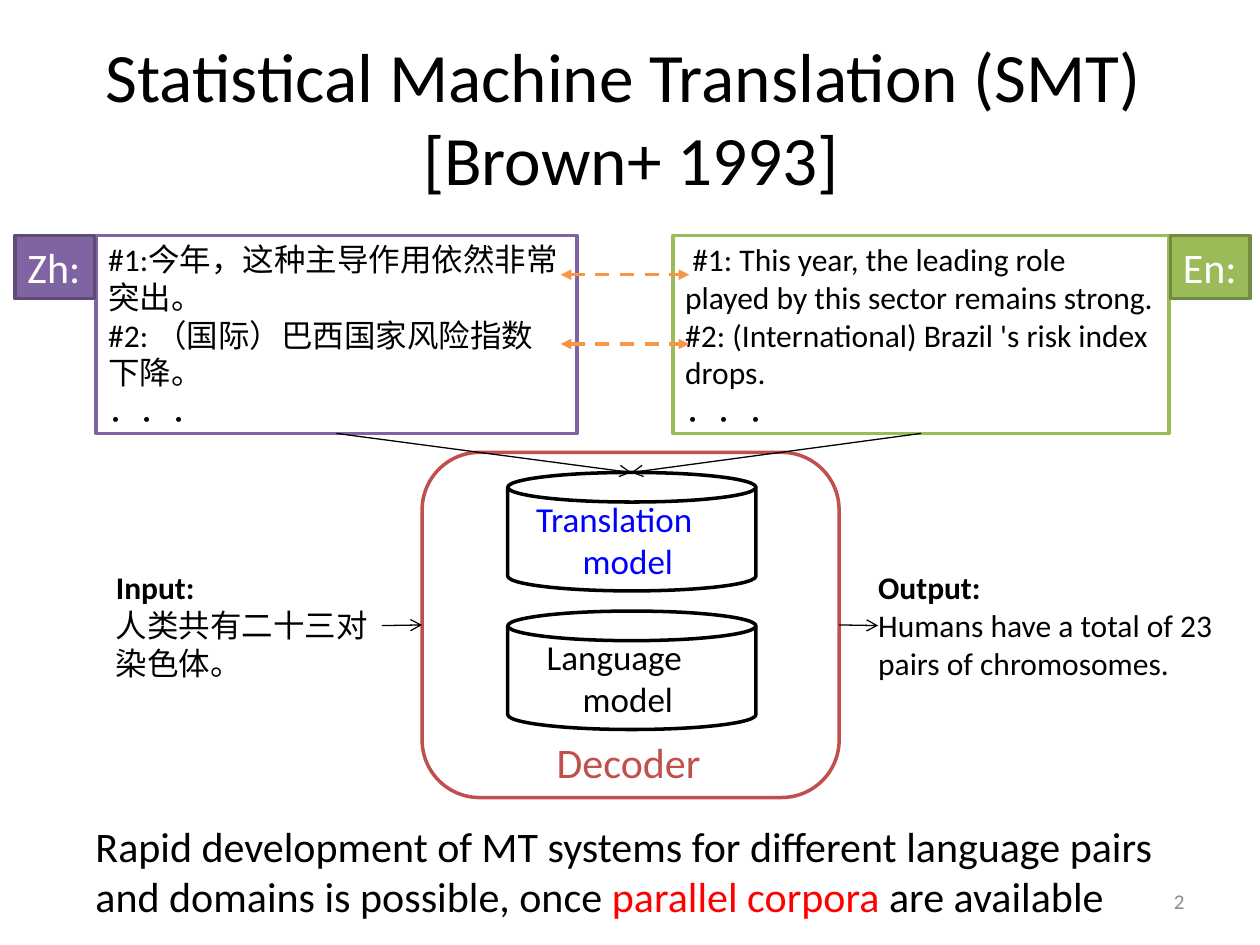
from lxml import etree
from pptx import Presentation
from pptx.dml.color import RGBColor
from pptx.enum import dml, shapes, text
from pptx.oxml.ns import qn
from pptx.util import Inches, Pt

BLACK, WHITE, BLUE, RED, GREY = "000000", "FFFFFF", "0000FF", "FF0000", "8C8C8C"
PURPLE, GREEN, ORANGE, BRICK = "8064A2", "9BBB59", "F79646", "C0504D"
TOP, LEFT, BOTTOM, RIGHT = range(4)
CENTER, END = text.PP_ALIGN.CENTER, text.PP_ALIGN.RIGHT
MIDDLE = text.MSO_ANCHOR.MIDDLE
SHAPE = shapes.MSO_SHAPE


def rgb(value):
    return RGBColor.from_string(value)


class Board:
    """Style and current slide; lengths are cells of a 100 x 75 grid."""
    latin, asian = "Calibri", "Noto Sans CJK SC"

    def __init__(self, columns=100, rows=75):
        self.deck = Presentation()
        self.deck.slide_width, self.deck.slide_height = Inches(10), Inches(7.5)
        self.cell_w = self.deck.slide_width / columns
        self.cell_h = self.deck.slide_height / rows
        self.slide = self.deck.slides.add_slide(self.deck.slide_layouts[5])

    def cells(self, *values):
        units = (self.cell_w, self.cell_h)
        return [round(value * units[i % 2]) for i, value in enumerate(values)]

    def set_text(self, frame, paragraphs, size, color=BLACK, align=text.PP_ALIGN.LEFT, **fmt):
        """Each paragraph is a string or a list of (string, font overrides)."""
        for name, value in {"word_wrap": True, "auto_size": text.MSO_AUTO_SIZE.NONE, **fmt}.items():
            setattr(frame, name, value)
        for i, runs in enumerate(paragraphs):
            paragraph = frame.paragraphs[0] if i == 0 else frame.add_paragraph()
            paragraph.alignment = align
            for words, changes in [(runs, {})] if isinstance(runs, str) else runs:
                for j, line in enumerate(words.split("\n")):
                    if j:
                        paragraph.add_line_break()
                    run = paragraph.add_run()
                    run.text = line
                    self.style(run.font, size, **{"color": color, **changes})

    def style(self, font, size, color, bold=False):
        for name, value in {"size": Pt(size), "name": self.latin, "bold": bold}.items():
            setattr(font, name, value)
        font.color.rgb = rgb(color)
        latin = font._element.find(qn("a:latin"))
        asian = etree.Element(qn("a:ea"), typeface=self.asian)
        latin.addnext(asian)

    def title(self, at, words, size):
        holder = self.slide.shapes.title
        holder.left, holder.top, holder.width, holder.height = self.cells(*at)
        self.set_text(holder.text_frame, [words], size, align=CENTER, vertical_anchor=MIDDLE)

    def label(self, at, paragraphs, size, **fmt):
        box = self.slide.shapes.add_textbox(*self.cells(*at))
        self.set_text(box.text_frame, paragraphs, size, **fmt)
        return box

    def shape(self, kind, at, line, fill=None, paragraphs=(), size=18, **fmt):
        item = self.slide.shapes.add_shape(kind, *self.cells(*at))
        item.shadow.inherit = False
        if fill:
            item.fill.solid()
            item.fill.fore_color.rgb = rgb(fill)
        else:
            item.fill.background()
        item.line.color.rgb, item.line.width = rgb(line), Pt(2)
        self.set_text(item.text_frame, paragraphs, size, **fmt)
        return item

    def arrow(self, start, end, color=BLACK, width=0.75, dash=None, **heads):
        """Ends are (x, y) cells, or (shape, side) to join the shape."""
        joined = [not isinstance(point[0], (int, float)) for point in (start, end)]
        places = [(0, 0) if join else point for join, point in zip(joined, (start, end))]
        link = self.slide.shapes.add_connector(
            shapes.MSO_CONNECTOR.STRAIGHT, *self.cells(*places[0], *places[1]))
        if joined[0]:
            link.begin_connect(*start)
        if joined[1]:
            link.end_connect(*end)
        link.line.color.rgb, link.line.width = rgb(color), Pt(width)
        if dash:
            link.line.dash_style = dash
        for name, kind in (heads or {"tailEnd": "arrow"}).items():
            etree.SubElement(link.line._get_or_add_ln(), qn(f"a:{name}"), type=kind)
        etree.SubElement(link._element.spPr, qn("a:effectLst"))


def main():
    board = Board()
    board.title((5.1, 3, 90, 12.5), "Statistical Machine Translation (SMT) \n[Brown+ 1993]", 39.6)

    # Parallel corpora with their language tags
    chinese = ["#1:今年，这种主导作用依然非常突出。", "#2: （国际）巴西国家风险指数下降。", "．．．"]
    english = [" #1: This year, the leading role played by this sector remains strong.",
               "#2: (International) Brazil 's risk index drops.", "．．．"]
    corpora = []
    for sentences, left, width, tag, tag_left, color, edge in (
            (chinese, 7.6, 38.2, "Zh:", 1.2, PURPLE, "5F4A78"),
            (english, 53.4, 39.4, "En:", 92.9, GREEN, "738A42")):
        corpora.append(board.shape(SHAPE.RECTANGLE, (left, 18.7, width, 15.7), color, WHITE,
                                   sentences, vertical_anchor=MIDDLE))
        board.shape(SHAPE.RECTANGLE, (tag_left, 18.7, 6.3, 5), edge, color, [tag], 24,
                    color=WHITE, word_wrap=False, vertical_anchor=text.MSO_ANCHOR.TOP)

    # Sentence alignments
    for row in (21.8, 27.3):
        board.arrow((44.5, row), (54.7, row), ORANGE, 2, dml.MSO_LINE.DASH,
                    headEnd="triangle", tailEnd="triangle")

    # Decoder with its two models
    decoder = board.shape(SHAPE.ROUNDED_RECTANGLE, (33.5, 35.9, 33.1, 27.4), BRICK)
    for model, row, color in (("Translation　model ", 37.5, BLUE),
                              ("Language　model ", 48.5, BLACK)):
        board.shape(SHAPE.CAN, (40.3, row, 19.7, 9.4), BLACK, WHITE, [model], 20,
                    color=color, align=CENTER, vertical_anchor=MIDDLE)
    board.label((43.2, 58, 13.6, 5), ["Decoder"], 24, color=BRICK, word_wrap=False)
    for corpus in corpora:
        board.arrow((corpus, BOTTOM), (50.1, 37.5))

    # Input and output
    flush = dict.fromkeys(("margin_left", "margin_top", "margin_right", "margin_bottom"), 0)
    source, target = (
        board.label((left, 45.1, width, 9.1), [[(heading, {"bold": True})], sentence], 18, **flush)
        for left, width, heading, sentence in (
            (9.2, 21.1, "Input:", "人类共有二十三对染色体。"),
            (69.7, 27.6, "Output:", "Humans have a total of 23 pairs of chromosomes.")))
    board.arrow((source, RIGHT), (decoder, LEFT))
    board.arrow((decoder, RIGHT), (target, LEFT))

    # Conclusion and page number
    board.label((6.6, 64.6, 87, 9.1), [[
        ("Rapid development of MT systems for different language pairs and domains is possible, once ", {}),
        ("parallel corpora ", {"color": RED}), ("are available", {})]], 24)
    board.label((71.7, 69.5, 23.3, 4), ["2"], 12, color=GREY, align=END, vertical_anchor=MIDDLE)
    board.deck.save("out.pptx")


if __name__ == "__main__":
    main()
